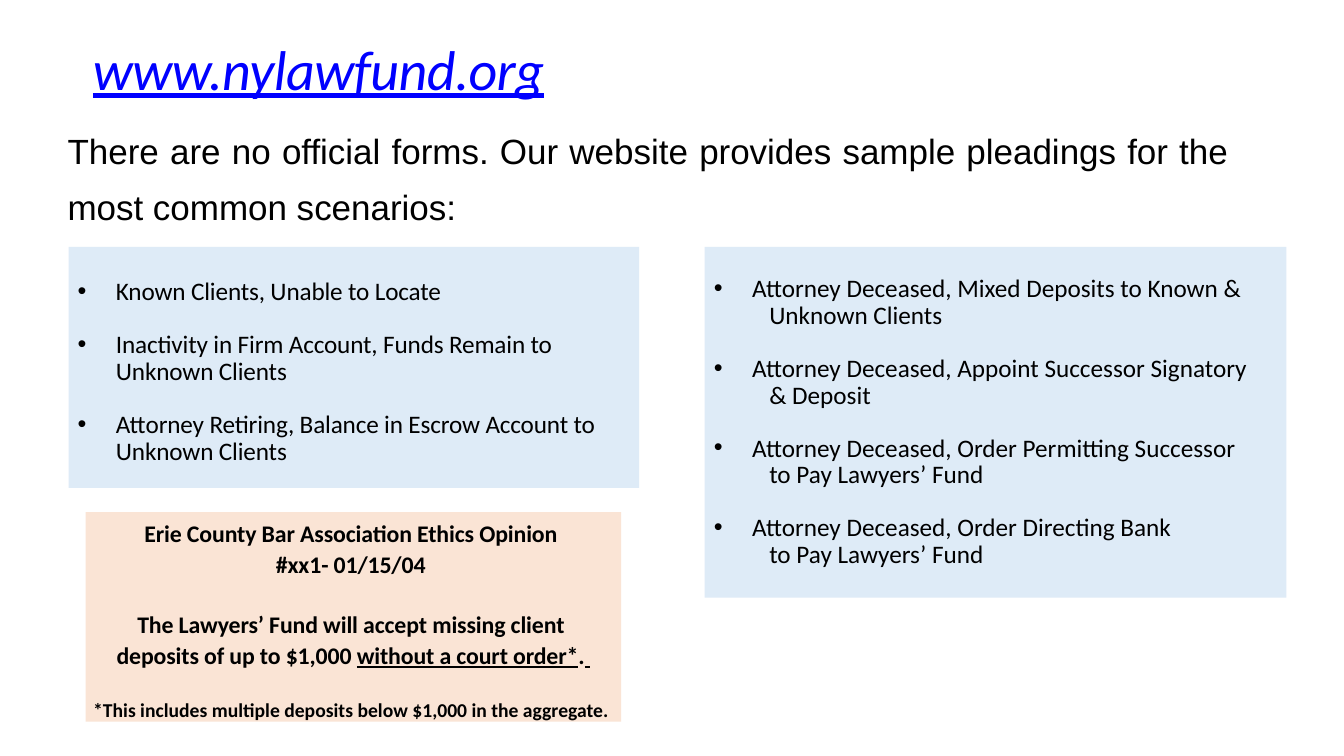
import pptx
import pptx.util
import pptx.dml.color
import pptx.enum.shapes
import pptx.enum.text
import pptx.oxml.ns
import lxml.etree

Inches = pptx.util.Inches
Pt = pptx.util.Pt
ALIGN = pptx.enum.text.PP_ALIGN
ANCHOR = pptx.enum.text.MSO_ANCHOR

HUES = {"ink": "000000", "link": "0000FF", "blue": "DEEBF7", "peach": "FAE4D5"}

KNOWN = [
    ["Known Clients, Unable to Locate"],
    ["Inactivity in Firm Account, Funds Remain to Unknown Clients"],
    ["Attorney Retiring, Balance in Escrow Account to Unknown Clients"],
]
DECEASED = [
    ["Attorney Deceased, Mixed Deposits to Known &", "Unknown Clients"],
    ["Attorney Deceased, Appoint Successor Signatory", "& Deposit"],
    ["Attorney Deceased, Order Permitting Successor", "to Pay Lawyers’ Fund"],
    ["Attorney Deceased, Order Directing Bank", "to Pay Lawyers’ Fund"],
]
OPINION = [
    (0, ["Erie County Bar Association Ethics Opinion "]),
    (1.9, ["#xx1- 01/15/04 "]),
    (23.4, ["The Lawyers’ Fund will accept missing client "]),
    (1.9, ["deposits of up to $1,000 ", "without a court order*", ".", " "]),
]
FOOTNOTE = "*This includes multiple deposits below $1,000 in the aggregate. "


def color(name):
    return pptx.dml.color.RGBColor.from_string(HUES[name])


def frame(shape, top=0):
    text = shape.text_frame
    text.word_wrap = True
    text.vertical_anchor = ANCHOR.TOP
    text.margin_left = text.margin_right = text.margin_bottom = 0
    text.margin_top = Inches(top)
    return text


def panel(slide, box, hue, top=0):
    kind = pptx.enum.shapes.MSO_SHAPE.RECTANGLE
    shape = slide.shapes.add_shape(kind, *map(Inches, box))
    shape.shadow.inherit = False
    shape.fill.solid()
    shape.fill.fore_color.rgb = color(hue)
    shape.line.fill.background()
    return frame(shape, top)


def add_para(text, line, before=0, after=0, align=ALIGN.LEFT):
    para = text.paragraphs[0]
    if para.runs:
        para = text.add_paragraph()
    para.alignment = align
    para.line_spacing = Pt(line)
    para.space_before = Pt(before)
    para.space_after = Pt(after)
    return para


def add_run(para, words, size, face="Calibri", hue="ink", track=0):
    run = para.add_run()
    run.text = words
    run.font.size = Pt(size)
    run.font.name = face
    run.font.color.rgb = color(hue)
    run._r.get_or_add_rPr().set("spc", str(track))
    return run


def indent(para, left, first=0, mark=None):
    props = para._p.get_or_add_pPr()
    props.set("marL", str(Inches(left)))
    props.set("indent", str(Inches(first)))
    if mark:
        qn = pptx.oxml.ns.qn
        lxml.etree.SubElement(props, qn("a:buFont")).set("typeface", "Arial")
        lxml.etree.SubElement(props, qn("a:buChar")).set("char", mark)


def add_head(slide, box):
    text = frame(slide.shapes.add_textbox(*map(Inches, box)), 0.11)
    site = add_para(text, 48)
    indent(site, 0.25)
    run = add_run(site, "www.nylawfund.org", 40, hue="link", track=-40)
    run.font.italic = run.font.underline = True
    intro = add_para(text, 40, 10.2, 24.8, ALIGN.JUSTIFY)
    add_run(
        intro,
        "There are no official forms. Our website provides sample pleadings "
        "for the most common scenarios: ",
        25,
        "Arial",
    )


def add_list(slide, box, items, top=0, anchor=ANCHOR.TOP, track=0):
    text = panel(slide, box, "blue", top)
    text.vertical_anchor = anchor
    for item in items:
        for row, words in enumerate(item):
            ends = row == len(item) - 1 and item is not items[-1]
            para = add_para(text, 19, after=19 if ends else 0)
            if row:
                indent(para, 0.64)
            else:
                indent(para, 0.47, -0.38, "•")
            add_run(para, words, 18, track=track)


def add_note(slide, box):
    text = panel(slide, box, "peach", 0.07)
    for before, parts in OPINION:
        para = add_para(text, 20, before, align=ALIGN.CENTER)
        for spot, words in enumerate(parts):
            run = add_run(para, words, 17, track=-10)
            run.font.bold = True
            run.font.underline = spot % 2 == 1
    para = add_para(text, 14, 23.2, 5.8, ALIGN.CENTER)
    add_run(para, FOOTNOTE, 14).font.bold = True


def main():
    deck = pptx.Presentation()
    deck.slide_width = Inches(13.33)
    deck.slide_height = Inches(7.5)
    slide = deck.slides.add_slide(deck.slide_layouts[6])
    add_list(slide, (6.99, 2.45, 5.77, 3.48), DECEASED, anchor=ANCHOR.MIDDLE)
    add_head(slide, (0.67, 0.23, 11.51, 2.22))
    add_list(slide, (0.68, 2.45, 5.66, 2.39), KNOWN, top=0.32, track=-10)
    add_note(slide, (0.85, 5.08, 5.31, 2.08))
    deck.save("out.pptx")


if __name__ == "__main__":
    main()
